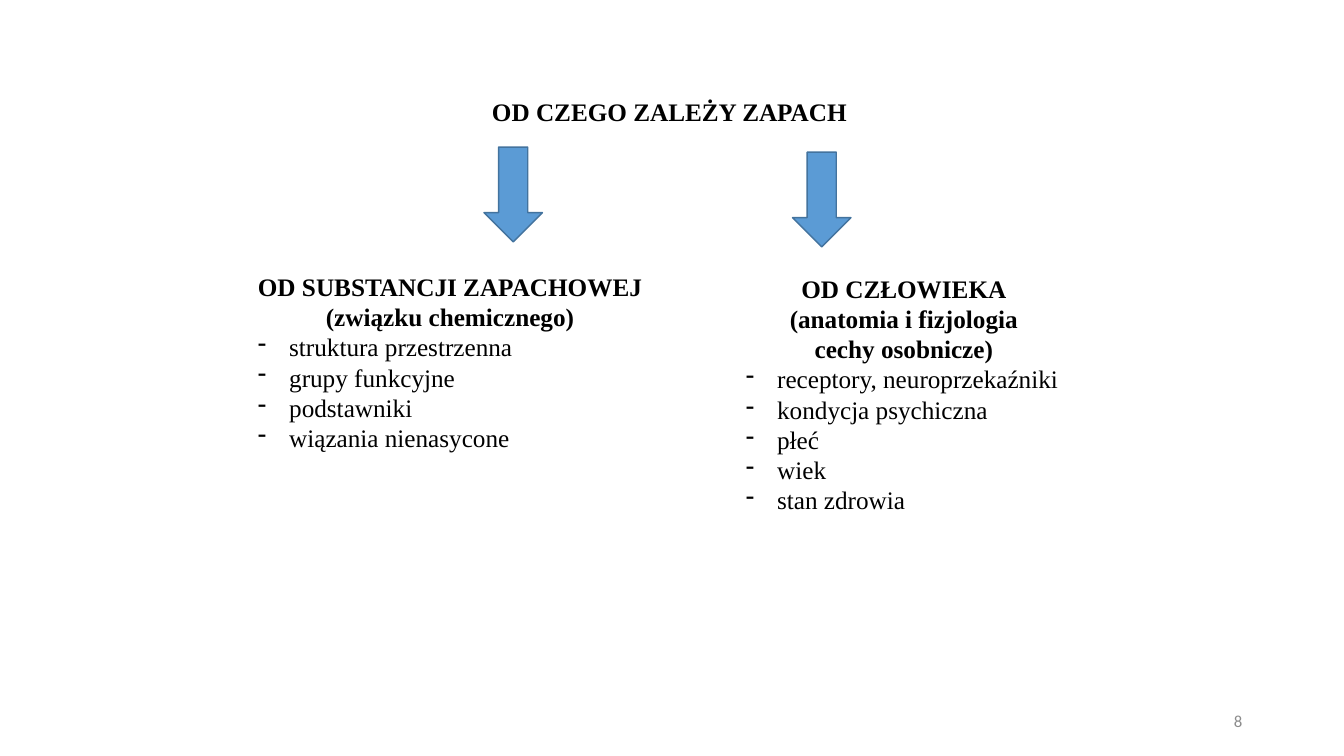
from pptx import Presentation
from pptx.dml.color import RGBColor
from pptx.enum.shapes import MSO_SHAPE
from pptx.enum.text import MSO_ANCHOR, MSO_AUTO_SIZE, PP_ALIGN
from pptx.oxml.ns import qn
from pptx.util import Inches, Pt
from lxml.etree import SubElement

BLACK = RGBColor(0x00, 0x00, 0x00)
GREY = RGBColor(0x8C, 0x8C, 0x8C)
BLUE = RGBColor(0x5B, 0x9B, 0xD5)
DARK_BLUE = RGBColor(0x43, 0x73, 0x9E)

BODY = {"name": "Times New Roman", "size": Pt(18), "bold": False}
HEADING = {**BODY, "bold": True}
NUMBER = {"name": "Calibri", "size": Pt(12)}
LEFT, CENTER, RIGHT = PP_ALIGN.LEFT, PP_ALIGN.CENTER, PP_ALIGN.RIGHT


class SlideBuilder:
    """Draws the elements of one slide in a shared style."""

    def __init__(self, prs):
        self.slide = prs.slides.add_slide(prs.slide_layouts[1])
        title = self.slide.shapes.title.element
        title.getparent().remove(title)

    def add_text(self, p, text, style, color=BLACK, align=LEFT):
        p.alignment = align
        r = p.add_run()
        r.text = text
        for key, value in style.items():
            setattr(r.font, key, value)
        r.font.color.rgb = color

    def topic(self, text, left, top, width, height):
        sp = self.slide.placeholders[1]
        box = {"left": left, "top": top, "width": width, "height": height}
        for key, value in box.items():
            setattr(sp, key, Inches(value))
        tf = sp.text_frame
        tf.auto_size = MSO_AUTO_SIZE.NONE
        p = tf.paragraphs[0]
        pPr = p._p.get_or_add_pPr()
        pPr.set("marL", "0")
        pPr.set("indent", "0")
        SubElement(pPr, qn("a:buNone"))
        p.line_spacing = 1.2
        p.space_before = Pt(0)
        self.add_text(p, text, HEADING, align=CENTER)

    def arrow(self, left, top):
        sp = self.slide.shapes.add_shape(
            MSO_SHAPE.DOWN_ARROW, Inches(left), Inches(top), Inches(0.58), Inches(0.94))
        sp.shadow.inherit = False
        sp.fill.solid()
        sp.fill.fore_color.rgb = BLUE
        sp.line.color.rgb = DARK_BLUE
        sp.line.width = Pt(1)

    def text_box(self, left, top, width, height):
        sp = self.slide.shapes.add_textbox(*map(Inches, (left, top, width, height)))
        return sp.text_frame

    def factors(self, box, headings, items):
        tf = self.text_box(*box)
        tf.word_wrap = False
        tf.auto_size = MSO_AUTO_SIZE.SHAPE_TO_FIT_TEXT
        p = tf.paragraphs[0]
        for i, (text, align) in enumerate(headings):
            p = tf.add_paragraph() if i else p
            self.add_text(p, text, HEADING, align=align)
        for text in items:
            p = tf.add_paragraph()
            pPr = p._p.get_or_add_pPr()
            pPr.set("marL", str(Inches(0.31)))
            pPr.set("indent", str(-Inches(0.31)))
            SubElement(pPr, qn("a:buChar")).set("char", "-")
            self.add_text(p, text, BODY)

    def page_number(self, text, box):
        tf = self.text_box(*box)
        tf.word_wrap = True
        tf.vertical_anchor = MSO_ANCHOR.MIDDLE
        self.add_text(tf.paragraphs[0], text, NUMBER, GREY, RIGHT)


def main():
    prs = Presentation()
    prs.slide_width, prs.slide_height = Inches(13.33), Inches(7.5)
    s = SlideBuilder(prs)
    s.topic("OD CZEGO ZALEŻY ZAPACH", 0.44, 0.85, 12.4, 6.13)
    s.arrow(4.8, 1.46)
    s.arrow(7.86, 1.51)
    s.factors(
        (2.46, 2.64, 4.05, 1.92),
        [("OD SUBSTANCJI ZAPACHOWEJ", LEFT), ("(związku chemicznego)", CENTER)],
        ["struktura przestrzenna", "grupy funkcyjne", "podstawniki", "wiązania nienasycone"])
    s.factors(
        (7.3, 2.66, 3.33, 2.52),
        [("OD CZŁOWIEKA", CENTER), ("(anatomia i fizjologia", CENTER),
         ("cechy osobnicze)", CENTER)],
        ["receptory, neuroprzekaźniki", "kondycja psychiczna", "płeć", "wiek", "stan zdrowia"])
    s.page_number("8", (9.42, 6.95, 3, 0.4))
    prs.save("out.pptx")


if __name__ == "__main__":
    main()
